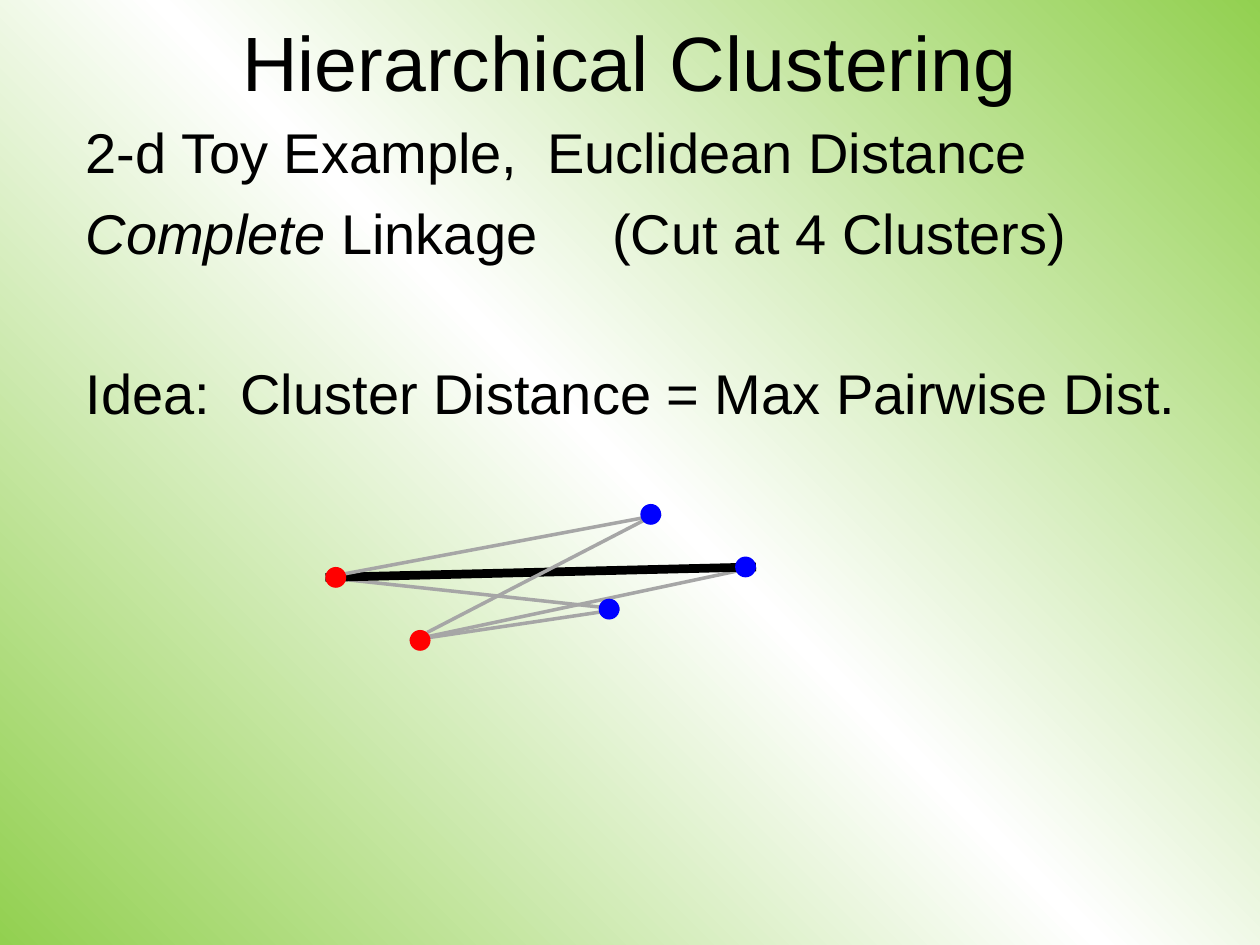
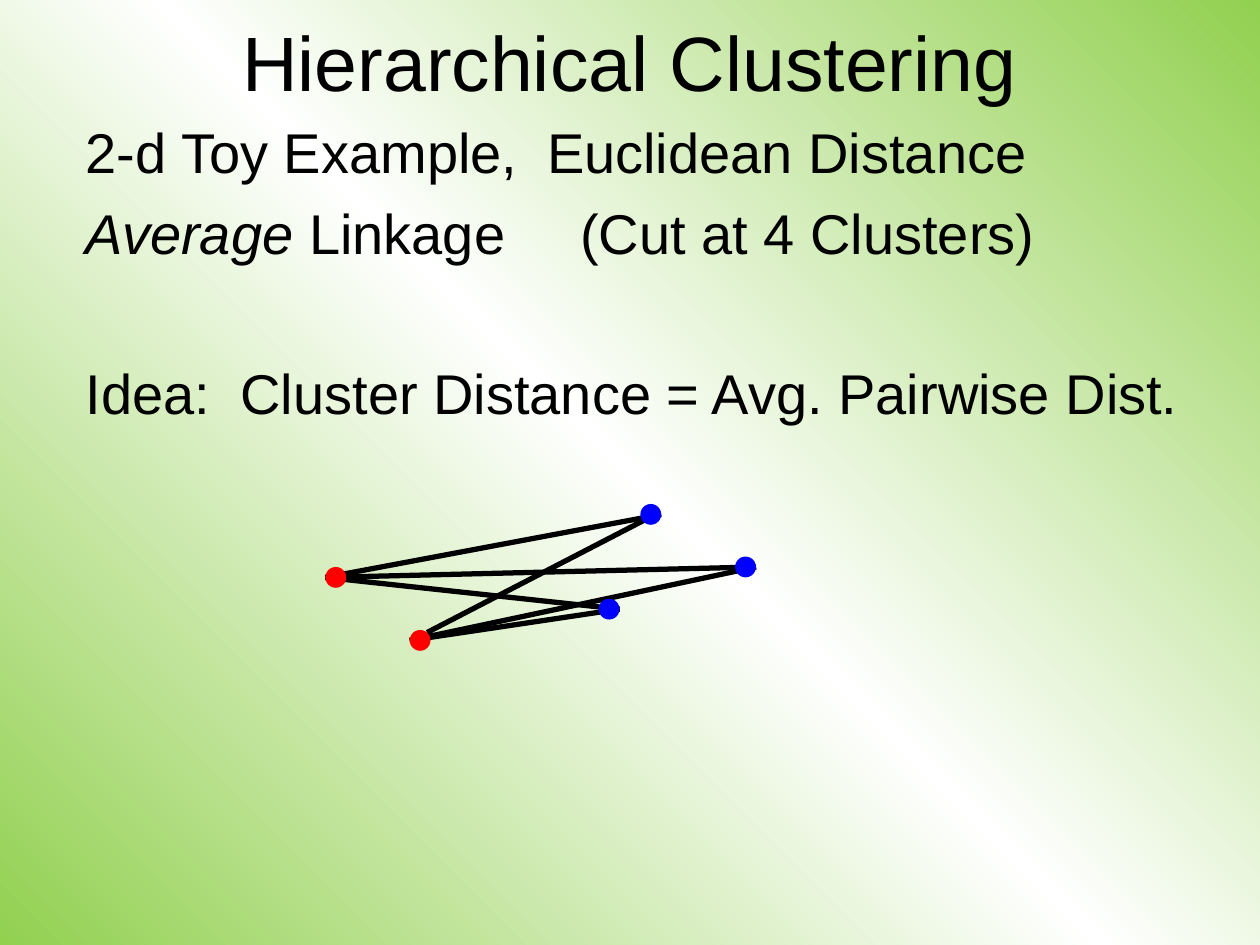
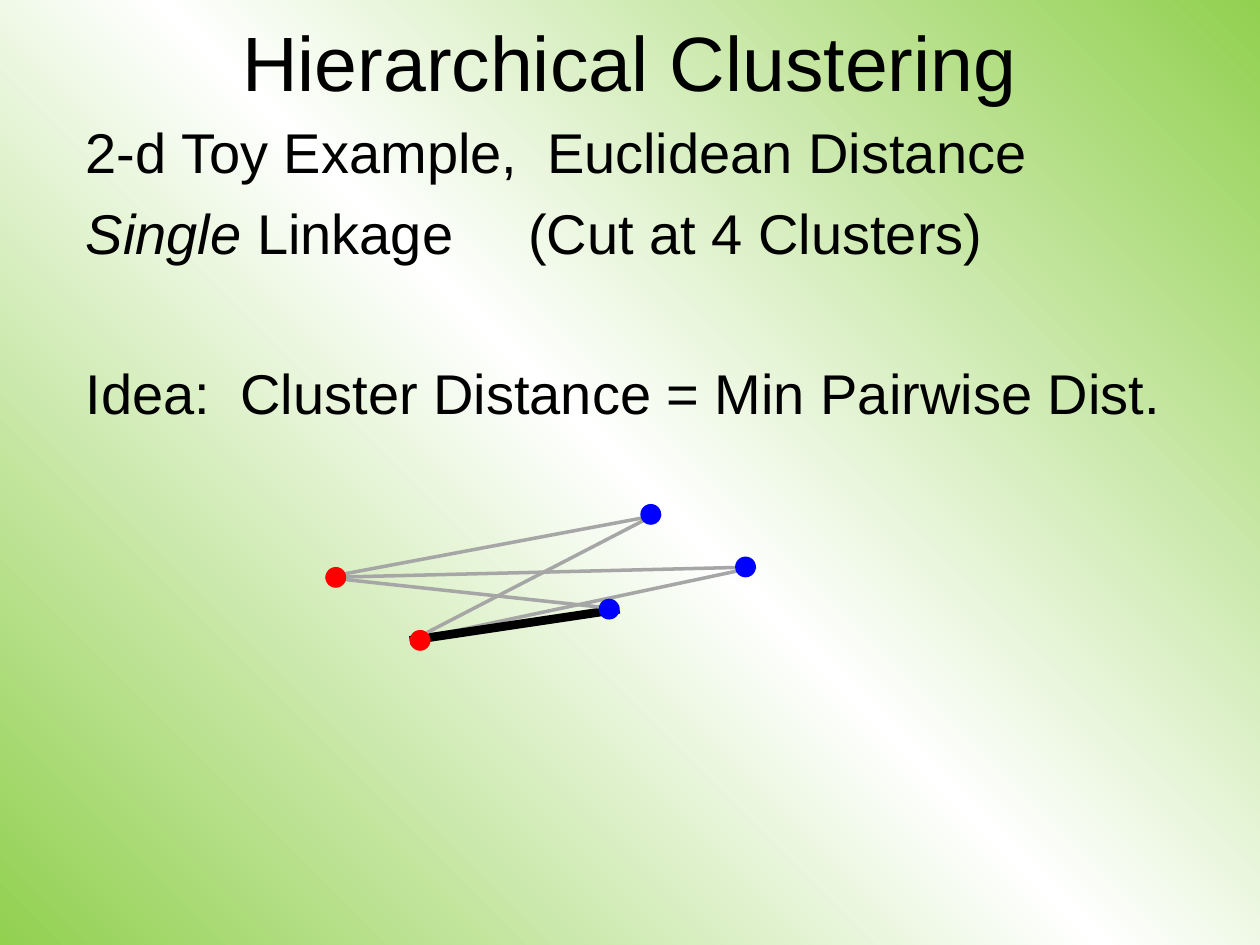
from copy import deepcopy

from lxml import etree
from pptx import Presentation
from pptx.dml.color import RGBColor
from pptx.enum.shapes import MSO_CONNECTOR, MSO_SHAPE
from pptx.enum.text import MSO_ANCHOR, PP_ALIGN
from pptx.oxml.ns import qn
from pptx.util import Cm, Pt

LINE, OVAL = MSO_CONNECTOR.STRAIGHT, MSO_SHAPE.OVAL
TOP, CENTER = MSO_ANCHOR.TOP, PP_ALIGN.CENTER

FONT = "Arial"
BLACK, GRAY, RED, BLUE = "000000", "A6A6A6", "FF0000", "0000FF"
GRADIENT = [(0, "92D050"), (0.5, "FFFFFF"), (1, "92D050")]

TITLE = "Hierarchical Clustering"
TITLE_BOX = (1.9, 0.21, 21.59, 1.7)
BODY_BOX = (1.48, 2.12, 23.5, 15.88)

DOT = 0.42
RED_DOTS = {"left": (6.56, 11.43), "low": (8.26, 12.7)}
BLUE_DOTS = {"top": (12.91, 10.16), "near": (12.07, 12.07), "far": (14.82, 11.22)}
PAIRS = [("low", "far"), ("low", "near"), ("left", "near"),
         ("left", "far"), ("left", "top"), ("low", "top")]
SHORT_PAIR = ("low", "top")
SHORT_ENDS = (8.61, 12.75, 13.23, 10.36)

FAINT, EVEN, STRONG = (GRAY, 2), (BLACK, 3), (BLACK, 5)
SLIDES = [
    {"linkage": "Complete", "measure": "Max", "tab": 10.61,
     "base": FAINT, "chosen": ("left", "far")},
    {"linkage": "Average", "measure": "Avg.", "tab": 9.97,
     "base": EVEN, "chosen": None},
    {"linkage": "Single", "measure": "Min", "tab": 8.92,
     "base": FAINT, "chosen": ("low", "near")},
]


def rgb(color):
    return RGBColor.from_string(color)


def set_background(master):
    fill = master.background.fill
    fill.gradient()
    fill.gradient_angle = 225
    stops = master.element.find(".//" + qn("a:gsLst"))
    stops.append(deepcopy(stops[-1]))
    for stop, (position, color) in zip(fill.gradient_stops, GRADIENT):
        stop.position = position
        stop.color.rgb = rgb(color)


def add_text_box(s, box, margin_top):
    tf = s.shapes.add_textbox(*map(Cm, box)).text_frame
    formats = {"word_wrap": True, "vertical_anchor": TOP, "margin_top": Cm(margin_top)}
    for name, value in formats.items():
        setattr(tf, name, value)
    return tf


def add_run(p, text, size, italic=False):
    r = p.add_run()
    r.text = text
    for name, value in {"name": FONT, "size": Pt(size), "italic": italic}.items():
        setattr(r.font, name, value)
    r.font.color.rgb = rgb(BLACK)


def add_title(s):
    p = add_text_box(s, TITLE_BOX, 0.08).paragraphs[0]
    p.alignment = CENTER
    add_run(p, TITLE, 44)


def add_body(s, linkage, measure, tab):
    lines = [
        (0, 9.3, [("2-d Toy Example,\tEuclidean Distance", False)]),
        (8, tab, [(linkage, True), (" Linkage\t(Cut at 4 Clusters)", False)]),
        (52.8, 3.12, [(f"Idea:\tCluster Distance = {measure} Pairwise Dist.", False)]),
    ]
    tf = add_text_box(s, BODY_BOX, 0.25)
    for i, (before, stop, runs) in enumerate(lines):
        p = tf.add_paragraph() if i else tf.paragraphs[0]
        p.space_before = Pt(before)
        tabs = etree.SubElement(p._p.get_or_add_pPr(), qn("a:tabLst"))
        etree.SubElement(tabs, qn("a:tab"), pos=str(int(Cm(stop))), algn="l")
        for text, italic in runs:
            add_run(p, text, 32, italic)


def pair_ends(pair):
    if pair == SHORT_PAIR:
        return SHORT_ENDS
    (x1, y1), (x2, y2) = RED_DOTS[pair[0]], BLUE_DOTS[pair[1]]
    return x1, y1 + DOT / 2, x2 + DOT, y2 + DOT / 2


def add_pair_lines(s, base, chosen):
    for pair in PAIRS:
        color, width = STRONG if pair == chosen else base
        line = s.shapes.add_connector(LINE, *map(Cm, pair_ends(pair)))
        line.line.color.rgb = rgb(color)
        line.line.width = Pt(width)
        etree.SubElement(line._element.spPr, qn("a:effectLst"))


def add_dots(s):
    for dots, color in ((RED_DOTS, RED), (BLUE_DOTS, BLUE)):
        for x, y in dots.values():
            sp = s.shapes.add_shape(OVAL, Cm(x), Cm(y), Cm(DOT), Cm(DOT))
            sp.shadow.inherit = False
            sp.fill.solid()
            sp.fill.fore_color.rgb = rgb(color)
            sp.line.fill.background()


def main():
    prs = Presentation()
    prs.slide_width, prs.slide_height = Cm(25.4), Cm(19.05)
    set_background(prs.slide_master)
    for item in SLIDES:
        s = prs.slides.add_slide(prs.slide_layouts[6])
        add_pair_lines(s, item["base"], item["chosen"])
        add_title(s)
        add_body(s, item["linkage"], item["measure"], item["tab"])
        add_dots(s)
    prs.save("out.pptx")


if __name__ == "__main__":
    main()
